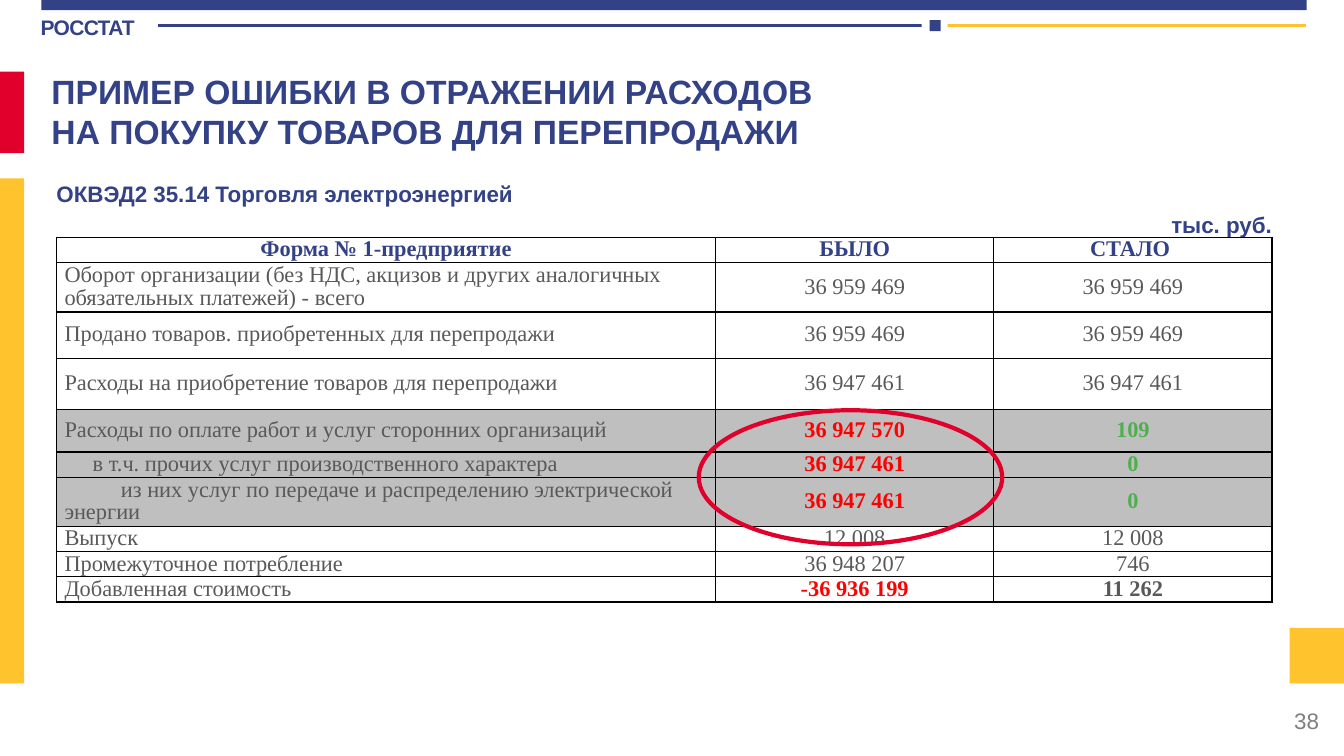
from dataclasses import dataclass

from lxml import etree
from pptx import Presentation
from pptx.dml.color import RGBColor
from pptx.enum.shapes import MSO_CONNECTOR, MSO_SHAPE
from pptx.enum.text import MSO_ANCHOR, MSO_AUTO_SIZE, PP_ALIGN
from pptx.oxml.ns import qn
from pptx.util import Emu, Inches, Pt

RECTANGLE, OVAL = MSO_SHAPE.RECTANGLE, MSO_SHAPE.OVAL
STRAIGHT = MSO_CONNECTOR.STRAIGHT
TOP, MIDDLE, BOTTOM = MSO_ANCHOR.TOP, MSO_ANCHOR.MIDDLE, MSO_ANCHOR.BOTTOM
LEFT, CENTER, RIGHT = PP_ALIGN.LEFT, PP_ALIGN.CENTER, PP_ALIGN.RIGHT
NO_AUTOFIT = MSO_AUTO_SIZE.NONE

COLORS = {
    "navy": "334286", "crimson": "E1002B", "amber": "FFC32E", "white": "FFFFFF",
    "black": "000000", "text": "595959", "number": "808080", "shade": "BFBFBF",
    "wrong": "FF0000", "right": "4FAF4F",
}
SANS, SERIF = "Arial", "Times New Roman"
WIDTH, HEIGHT = Inches(13.33), Inches(7.5)
COLUMNS = (7.05, 13.65, 9.45, 9.45, 9.45, 20.7, 20.7)
LABEL_SPAN = 5
UNIT_ROW = 1
CELL_MARGIN = 0.08
INDENT_STEP = 0.28


@dataclass(frozen=True)
class Area:
    left: float
    top: float
    width: float
    height: float

    def emu(self) -> tuple[Emu, Emu, Emu, Emu]:
        return across(self.left), down(self.top), across(self.width), down(self.height)


@dataclass(frozen=True)
class Block:
    area: Area
    color: str


@dataclass(frozen=True)
class Rule:
    start: float
    end: float
    color: str


@dataclass(frozen=True)
class Style:
    size: float
    color: str
    bold: bool = False
    family: str = SANS
    align: PP_ALIGN = LEFT


@dataclass(frozen=True)
class Entry:
    label: str
    before: str
    after: str
    height: float = 3.33
    depth: int = 0
    shaded: bool = False
    before_color: str = "text"
    after_color: str = "text"
    after_bold: bool = False


BLOCKS = (
    Block(Area(3.08, 0, 94.15, 1.33), "navy"),
    Block(Area(0, 9.47, 1.8, 10.8), "crimson"),
    Block(Area(0, 23.6, 1.8, 66.8), "amber"),
    Block(Area(95.95, 83.07, 4.05, 7.33), "amber"),
)
RULES = (Rule(11.78, 69.99, "navy"), Rule(68.94, 97.15, "amber"))
RULE_MARKS = (
    Block(Area(68.57, 2.67, 1.95, 1.47), "white"),
    Block(Area(69.17, 2.67, 0.82, 1.47), "navy"),
)
ENTRIES = (
    Entry("Оборот организации (без НДС, акцизов и других аналогичных обязательных платежей) - всего",
          "36 959 469", "36 959 469", 6.53),
    Entry("Продано товаров. приобретенных для перепродажи", "36 959 469", "36 959 469", 6.13),
    Entry("Расходы на приобретение товаров для перепродажи", "36 947 461", "36 947 461", 6.8),
    Entry("Расходы по оплате работ и услуг сторонних организаций", "36 947 570", "109",
          5.6, 0, True, "wrong", "right", True),
    Entry("в т.ч. прочих услуг производственного характера", "36 947 461", "0",
          3.33, 1, True, "wrong", "right", True),
    Entry("из них услуг по передаче и распределению электрической энергии", "36 947 461", "0",
          6.53, 2, True, "wrong", "right", True),
    Entry("Выпуск", "12 008", "12 008"),
    Entry("Промежуточное потребление", "36 948 207", "746"),
    Entry("Добавленная стоимость", "-36 936 199", "11 262",
          before_color="wrong", after_bold=True),
)


def across(share: float) -> Emu:
    return Emu(round(WIDTH * share / 100))


def down(share: float) -> Emu:
    return Emu(round(HEIGHT * share / 100))


def rgb(name: str) -> RGBColor:
    return RGBColor.from_string(COLORS[name])


def write(frame, text: str, style: Style):
    frame.text = text
    para = frame.paragraphs[0]
    para.alignment = style.align
    para.font.name, para.font.size = style.family, Pt(style.size)
    para.font.bold, para.font.color.rgb = style.bold, rgb(style.color)
    return para


def draw_block(page, block: Block) -> None:
    shape = page.shapes.add_shape(RECTANGLE, *block.area.emu())
    shape.shadow.inherit = False
    shape.fill.solid()
    shape.fill.fore_color.rgb = rgb(block.color)
    shape.line.fill.background()


def draw_rule(page, rule: Rule) -> None:
    line = page.shapes.add_connector(
        STRAIGHT, across(rule.start), down(3.33), across(rule.end), down(3.33))
    line.line.color.rgb, line.line.width = rgb(rule.color), Pt(2)
    etree.SubElement(line._element.spPr, qn("a:effectLst"))


def draw_text(page, area: Area, text: str, style: Style, anchor, margin: float):
    box = page.shapes.add_textbox(*area.emu())
    frame = box.text_frame
    frame.word_wrap, frame.vertical_anchor = True, anchor
    frame.margin_left = frame.margin_right = Inches(margin)
    frame.margin_top = frame.margin_bottom = Inches(margin / 2)
    return write(frame, text, style)


def add_borders(cell, sides: str) -> None:
    properties = cell._tc.get_or_add_tcPr()
    for side in sides:
        line = etree.SubElement(properties, qn(f"a:ln{side}"), w=str(Pt(1)))
        fill = etree.SubElement(line, qn("a:solidFill"))
        etree.SubElement(fill, qn("a:srgbClr"), val=COLORS["black"])


def fill_cell(cell, text: str, style: Style, sides: str = "LRTB",
              anchor=MIDDLE, shaded: bool = False):
    cell.margin_left = cell.margin_right = cell.margin_top = cell.margin_bottom = 0
    cell.vertical_anchor = anchor
    add_borders(cell, sides)
    if shaded:
        cell.fill.solid()
        cell.fill.fore_color.rgb = rgb("shade")
    else:
        cell.fill.background()
    para = write(cell.text_frame, text, style)
    para.line_spacing = 0.9
    if not text:
        etree.SubElement(para._p, qn("a:endParaRPr"), sz=str(style.size * 100))
    return para


def draw_table(page) -> None:
    caption = Style(16, "navy", True)
    unit = Style(16, "navy", True, SANS, RIGHT)
    header = Style(16, "navy", True, SERIF, CENTER)
    headings = (
        (("ОКВЭД2 35.14 Торговля электроэнергией", "", ""), caption, "", BOTTOM, 3.33),
        (("", "", "тыс. руб."), unit, "B", BOTTOM, 4),
        (("Форма № 1-предприятие", "БЫЛО", "СТАЛО "), header, "LRTB", MIDDLE, 3.33),
    )
    heights = [heading[-1] for heading in headings] + [entry.height for entry in ENTRIES]
    area = Area(4.2, 23.87, sum(COLUMNS), sum(heights))
    table = page.shapes.add_table(len(heights), len(COLUMNS), *area.emu()).table
    table.first_row = table.horz_banding = False
    for column, width in zip(table.columns, COLUMNS):
        column.width = across(width)
    for index, height in enumerate(heights):
        table.rows[index].height = down(height)
        if index != UNIT_ROW:
            table.cell(index, 0).merge(table.cell(index, LABEL_SPAN - 1))

    blanks = ("",) * (LABEL_SPAN - 1)
    for row, (texts, style, sides, anchor, _) in enumerate(headings):
        for column, text in enumerate((texts[0], *blanks, *texts[1:])):
            fill_cell(table.cell(row, column), text, style, sides, anchor)

    label_style = Style(16, "text", False, SERIF)
    for row, entry in enumerate(ENTRIES, len(headings)):
        for column, text in enumerate((entry.label, *blanks)):
            label = fill_cell(table.cell(row, column), text, label_style, shaded=entry.shaded)
            spacing = label._p.get_or_add_pPr()
            spacing.set("marL", str(Inches(CELL_MARGIN)))
            spacing.set("indent", str(Inches(INDENT_STEP * entry.depth)))
        values = ((entry.before, entry.before_color, entry.before_color == "wrong"),
                  (entry.after, entry.after_color, entry.after_bold))
        for column, (text, color, bold) in enumerate(values, LABEL_SPAN):
            fill_cell(table.cell(row, column), text,
                      Style(16, color, bold, SERIF, CENTER), shaded=entry.shaded)


def draw_title(page) -> None:
    title = page.shapes.title
    title.left, title.top, title.width, title.height = Area(3.08, 8.67, 60.84, 16).emu()
    frame = title.text_frame
    frame.word_wrap, frame.auto_size, frame.vertical_anchor = True, NO_AUTOFIT, TOP
    write(frame, "ПРИМЕР ОШИБКИ В ОТРАЖЕНИИ РАСХОДОВ НА ПОКУПКУ ТОВАРОВ ДЛЯ ПЕРЕПРОДАЖИ",
          Style(24, "navy", True))


def draw_highlight(page) -> None:
    ring = page.shapes.add_shape(OVAL, *Area(51.99, 54.27, 22.58, 17.73).emu())
    ring.shadow.inherit = False
    ring.fill.background()
    ring.line.color.rgb, ring.line.width = rgb("crimson"), Pt(3)


def main() -> None:
    deck = Presentation()
    deck.slide_width, deck.slide_height = WIDTH, HEIGHT
    page = deck.slides.add_slide(deck.slide_layouts[5])
    for block in BLOCKS:
        draw_block(page, block)
    for rule in RULES:
        draw_rule(page, rule)
    for mark in RULE_MARKS:
        draw_block(page, mark)
    agency = draw_text(page, Area(3.03, 1.95, 8.63, 4.27), "РОССТАТ",
                       Style(15, "navy", True), TOP, 0)
    agency.runs[0]._r.get_or_add_rPr().set("spc", "-50")
    draw_text(page, Area(76.37, 92.67, 22.51, 5.33), "38",
              Style(16, "number", align=RIGHT), MIDDLE, 0.1)
    draw_title(page)
    draw_table(page)
    draw_highlight(page)
    deck.save("out.pptx")


if __name__ == "__main__":
    main()
